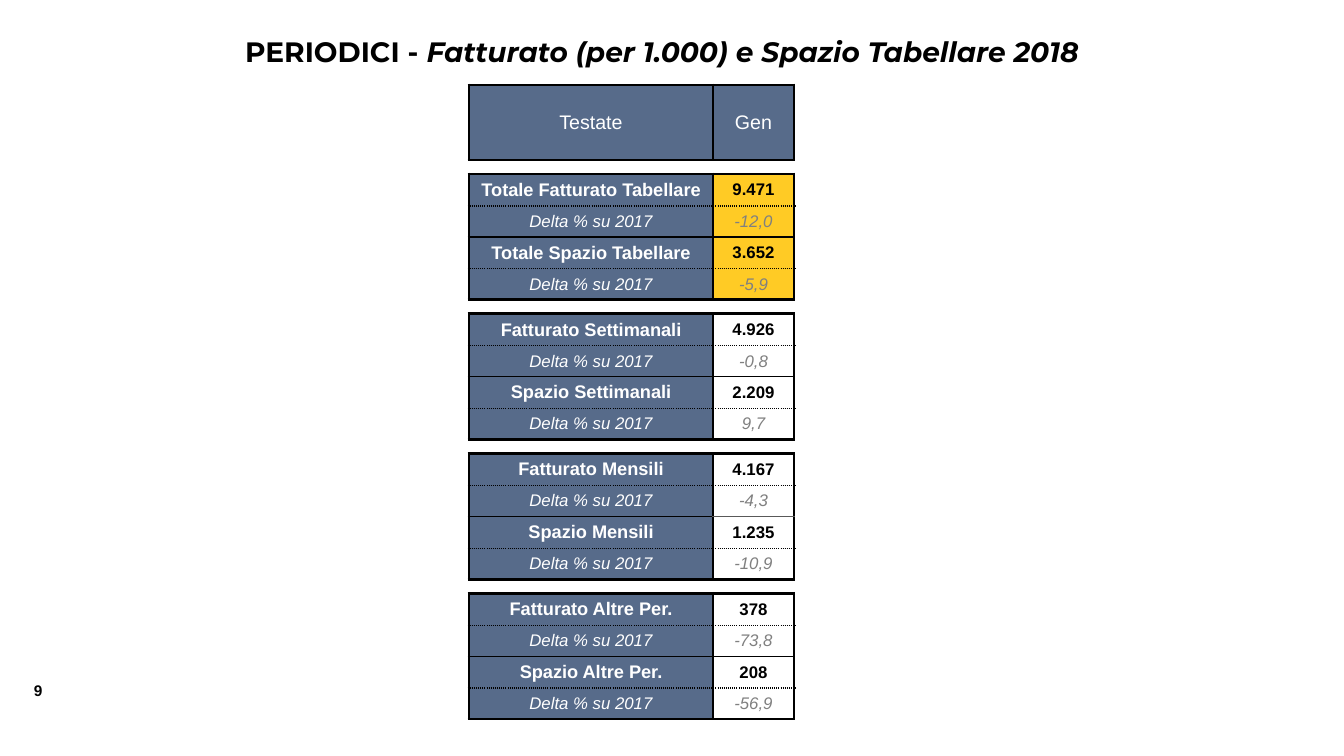
import pptx
import pptx.dml.color
import pptx.enum.text
import pptx.oxml
import pptx.oxml.ns
import pptx.util

# Content
TITLE = [("PERIODICI - ", "title"),
         ("Fatturato (per 1.000) e Spazio Tabellare 2018", "title_italic")]
PAGE_NUMBER = "9"
HEADINGS = ("Testate", "Gen")
DELTA = "Delta % su 2017"
GROUPS = [
    [("Totale Fatturato Tabellare", "9.471", "-12,0"),
     ("Totale Spazio Tabellare", "3.652", "-5,9")],
    [("Fatturato Settimanali", "4.926", "-0,8"),
     ("Spazio Settimanali", "2.209", "9,7")],
    [("Fatturato Mensili", "4.167", "-4,3"),
     ("Spazio Mensili", "1.235", "-10,9")],
    [("Fatturato Altre Per.", "378", "-73,8"),
     ("Spazio Altre Per.", "208", "-56,9")],
]

# Theme
BLACK, WHITE, GREY = "000000", "FFFFFF", "808080"
THEME = {
    "slate": "576B8A", "highlight": "FFCB25", "plain": WHITE,
    "spacer_size": 6,
    "text": {
        "title": (BLACK, dict(name="Montserrat", size=20, bold=True, italic=False)),
        "title_italic": (BLACK, dict(name="Montserrat", size=20, bold=True, italic=True)),
        "page": (BLACK, dict(name="Arial", size=11, bold=True)),
        "heading": (WHITE, dict(name="Arial", size=14, bold=False)),
        "label": (WHITE, dict(name="Arial", size=13, bold=True)),
        "delta_label": (WHITE, dict(name="Arial", size=12, bold=False, italic=True)),
        "value": (BLACK, dict(name="Arial", size=12, bold=True)),
        "delta": (GREY, dict(name="Arial", size=12, bold=False, italic=True)),
    },
}
THICK, THIN, DOTTED = (BLACK, 2.25, "solid"), (BLACK, 1, "solid"), (BLACK, 1, "sysDot")
MID_GREY = ("595959", 1.5, "solid")

# Layout in px
SCALE = 914400 / 100.8
SLIDE = (1344, 756)
TITLE_BOX = (158, 29, 1008, 44)
PAGE_BOX = (24, 676, 42, 29)
TABLE_LEFT, TABLE_TOP = 469, 85
COLUMNS = (244, 81)
HEADING_HEIGHT, SPACER_HEIGHT = 75, 14
GROUP_HEIGHTS = (32, 31, 31, 31)
LABEL_INSETS, NO_INSETS = (10, 5), (0, 0)
CENTER = pptx.enum.text.PP_ALIGN.CENTER
MIDDLE = pptx.enum.text.MSO_ANCHOR.MIDDLE


def px(length):
    return pptx.util.Emu(round(length * SCALE))


def rgb(color):
    return pptx.dml.color.RGBColor.from_string(color)


def write(paragraph, text, style):
    run = paragraph.add_run()
    run.text = text
    color, formats = THEME["text"][style]
    for key, value in formats.items():
        setattr(run.font, key, pptx.util.Pt(value) if key == "size" else value)
    run.font.color.rgb = rgb(color)


def set_insets(holder, horizontal, vertical):
    for side in ("left", "right"):
        setattr(holder, f"margin_{side}", px(horizontal))
    for side in ("top", "bottom"):
        setattr(holder, f"margin_{side}", px(vertical))


def format_cell(cell, fill, insets, **borders):
    set_insets(cell, *insets)
    cell.vertical_anchor = MIDDLE
    properties = cell._tc.get_or_add_tcPr()
    for side in "LRTB":
        border = borders[side]
        color, width, dash = border or (WHITE, 0, "solid")
        paint = f'<a:solidFill><a:srgbClr val="{color}"/></a:solidFill>' if border else "<a:noFill/>"
        properties.append(pptx.oxml.parse_xml(
            f'<a:ln{side} {pptx.oxml.ns.nsdecls("a")} w="{pptx.util.Pt(width)}">'
            f'{paint}<a:prstDash val="{dash}"/></a:ln{side}>'))
    cell.fill.solid()
    cell.fill.fore_color.rgb = rgb(fill)


def fill_row(table, row, texts, styles, fills, insets, tops, bottoms):
    for column, text in enumerate(texts):
        cell = table.cell(row, column)
        paragraph = cell.text_frame.paragraphs[0]
        paragraph.alignment = CENTER
        write(paragraph, text, styles[column])
        format_cell(cell, fills[column], insets[column],
                    L=THICK, R=THICK, T=tops[column], B=bottoms[column])


def fill_spacer(table, row):
    for column in range(len(COLUMNS)):
        cell = table.cell(row, column)
        cell.text_frame.paragraphs[0]._p.append(pptx.oxml.parse_xml(
            f'<a:endParaRPr {pptx.oxml.ns.nsdecls("a")} sz="{THEME["spacer_size"] * 100}"/>'))
        format_cell(cell, THEME["plain"], NO_INSETS, L=None, R=None, T=THICK, B=THICK)


def add_title(slide):
    title = slide.shapes.title
    title.left, title.top, title.width, title.height = map(px, TITLE_BOX)
    title.text_frame.word_wrap = True
    title.text_frame.vertical_anchor = MIDDLE
    set_insets(title.text_frame, *LABEL_INSETS)
    paragraph = title.text_frame.paragraphs[0]
    paragraph.alignment = CENTER
    for text, style in TITLE:
        write(paragraph, text, style)


def add_page_number(slide):
    frame = slide.shapes.add_textbox(*map(px, PAGE_BOX)).text_frame
    frame.word_wrap = False
    set_insets(frame, *LABEL_INSETS)
    write(frame.paragraphs[0], PAGE_NUMBER, "page")


def add_revenue_table(slide):
    heights = [HEADING_HEIGHT] + [SPACER_HEIGHT, *GROUP_HEIGHTS] * len(GROUPS)
    table = slide.shapes.add_table(
        len(heights), len(COLUMNS), px(TABLE_LEFT), px(TABLE_TOP),
        px(sum(COLUMNS)), px(sum(heights))).table
    table.first_row = table.horz_banding = False
    for style_id in table._tbl.tblPr.xpath("a:tableStyleId"):
        style_id.text = "{2D5ABB26-0587-4C30-8999-92F81FD0307C}"
    for column, width in zip(table.columns, COLUMNS):
        column.width = px(width)
    for row, height in zip(table.rows, heights):
        row.height = px(height)

    # Heading row
    slate = THEME["slate"]
    fill_row(table, 0, HEADINGS, ("heading",) * 2, (slate,) * 2,
             (LABEL_INSETS,) * 2, (THICK,) * 2, (THICK,) * 2)

    # Each group: a spacer, then two figures with their deltas
    insets = (LABEL_INSETS, NO_INSETS)
    for index, (revenue, space) in enumerate(GROUPS):
        first = 1 + index * (1 + len(GROUP_HEIGHTS))
        fill_spacer(table, first)
        fills = (slate, THEME["highlight" if index == 0 else "plain"])
        divider = (THIN, MID_GREY if revenue[0] == "Fatturato Mensili" else THIN)
        edges = [(THICK,) * 2, divider, (THICK,) * 2]
        for part, (label, value, delta) in enumerate((revenue, space)):
            row = first + 1 + 2 * part
            fill_row(table, row, (label, value), ("label", "value"),
                     fills, insets, edges[part], (DOTTED,) * 2)
            fill_row(table, row + 1, (DELTA, delta), ("delta_label", "delta"),
                     fills, insets, (DOTTED,) * 2, edges[part + 1])


def main():
    presentation = pptx.Presentation()
    presentation.slide_width, presentation.slide_height = map(px, SLIDE)
    slide = presentation.slides.add_slide(presentation.slide_layouts[5])
    add_page_number(slide)
    add_title(slide)
    add_revenue_table(slide)
    presentation.save("out.pptx")


if __name__ == "__main__":
    main()
